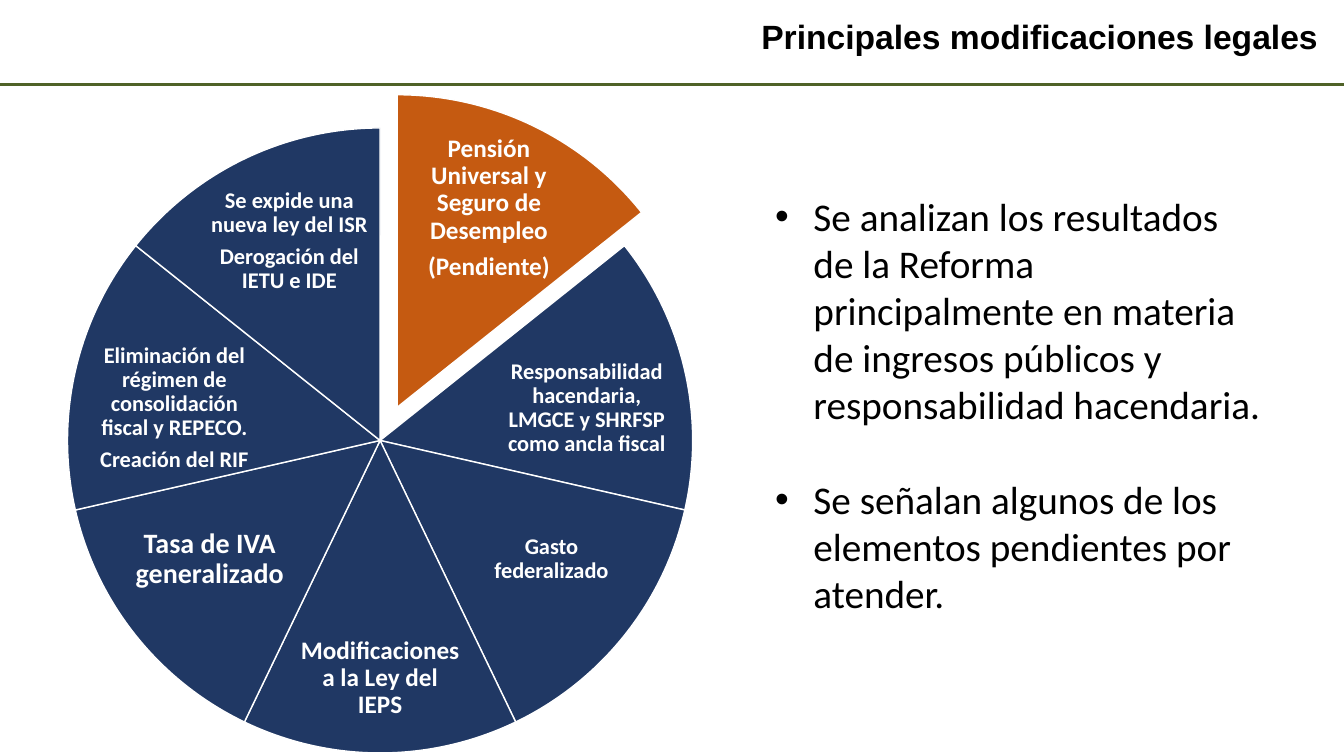
import pptx
import pptx.util
import pptx.dml.color
import pptx.enum.shapes
import pptx.enum.text
from lxml import etree

Inches, Pt = pptx.util.Inches, pptx.util.Pt
ALIGN = pptx.enum.text.PP_ALIGN
ANCHOR = pptx.enum.text.MSO_ANCHOR
COLORS = {"text": "000000", "white": "FFFFFF", "rule": "4F6228",
          "reform": "203864", "pending": "C55A11"}

# Clockwise from twelve o'clock: paragraphs, font size, label box
SLICES = [
    (["Pensión Universal y Seguro de Desempleo", "(Pendiente)"], 18, (4, 1.53, 1.7, 1.07)),
    (["Responsabilidad hacendaria, LMGCE y SHRFSP como ancla fiscal"], 16, (4.92, 3.48, 1.8, 1.14)),
    (["Gasto federalizado"], 16, (4.66, 4.96, 1.62, 1.18)),
    (["Modificaciones a la Ley del IEPS"], 18, (2.94, 6.14, 1.66, 1.18)),
    (["Tasa de IVA generalizado"], 20, (1.27, 4.96, 1.62, 1.18)),
    (["Eliminación del régimen de consolidación fiscal y REPECO.", "Creación del RIF"],
     16, (0.83, 3.48, 1.8, 1.14)),
    (["Se expide una nueva ley del ISR", "Derogación del IETU e IDE"], 16, (2.02, 1.86, 1.7, 1.07)),
]
FINDINGS = [
    "Se analizan los resultados de la Reforma principalmente en materia de ingresos públicos "
    "y responsabilidad hacendaria.",
    "Se señalan algunos de los elementos pendientes por atender.",
]


def rgb(name):
    return pptx.dml.color.RGBColor.from_string(COLORS[name])


def add_bullet(paragraph, indent):
    properties = paragraph._p.get_or_add_pPr()
    properties.set("marL", str(Inches(indent)))
    properties.set("indent", str(-Inches(indent)))
    for tag, name, value in (("buFont", "typeface", "Arial"), ("buChar", "char", "•")):
        etree.SubElement(properties, pptx.oxml.ns.qn(f"a:{tag}")).set(name, value)


def add_text(slide, box, texts, size, color, font="Calibri", bold=False, align=ALIGN.LEFT,
             anchor=ANCHOR.MIDDLE, margins=(0.1, 0.05), spacing=None, gap=0, indent=0):
    """Write paragraphs in a box; gap is the points between them."""
    frame = slide.shapes.add_textbox(*map(Inches, box)).text_frame
    across, down = map(Inches, margins)
    frame_format = {"word_wrap": True, "vertical_anchor": anchor, "margin_left": across,
                    "margin_right": across, "margin_top": down, "margin_bottom": down}
    for name, value in frame_format.items():
        setattr(frame, name, value)
    for index, text in enumerate(texts):
        paragraph = frame.add_paragraph() if index else frame.paragraphs[0]
        paragraph.text = text
        paragraph.alignment = align
        if spacing:
            paragraph.line_spacing = spacing
        if index:
            paragraph.space_before = Pt(gap)
        if indent:
            add_bullet(paragraph, indent)
        for name, value in {"name": font, "size": Pt(size), "bold": bold}.items():
            setattr(paragraph.font, name, value)
        paragraph.font.color.rgb = rgb(color)


def add_header(slide, left, top, width, height):
    rule_top = Inches(top + height)
    rule = slide.shapes.add_connector(pptx.enum.shapes.MSO_CONNECTOR.STRAIGHT,
                                      Inches(left), rule_top, Inches(left + width), rule_top)
    rule.line.color.rgb = rgb("rule")
    rule.line.width = Pt(2)
    etree.SubElement(rule._element.spPr, pptx.oxml.ns.qn("a:effectLst"))
    add_text(slide, (left + 0.05, top + 0.05, width - 0.21, height - 0.17),
             ["Principales modificaciones legales"], 24, "text", font="Arial",
             bold=True, align=ALIGN.RIGHT, spacing=0.9)


def add_reform_wheel(slide, left, top, diameter):
    """Draw equal slices, with the first one pulled out, and their labels."""
    full_turn = 216  # adjustment units in 360 degrees
    start = full_turn * 3 / 4
    step = full_turn / len(SLICES)
    for index, (texts, size, label_box) in enumerate(SLICES):
        pending = index == 0
        shift_x, shift_y = (0.17, -0.33) if pending else (0, 0)
        wedge = slide.shapes.add_shape(
            pptx.enum.shapes.MSO_SHAPE.PIE, Inches(left + shift_x), Inches(top + shift_y),
            Inches(diameter), Inches(diameter))
        wedge.adjustments[0] = (start + index * step) % full_turn
        wedge.adjustments[1] = (start + (index + 1) * step) % full_turn
        wedge.shadow.inherit = False
        wedge.fill.solid()
        wedge.fill.fore_color.rgb = rgb("pending" if pending else "reform")
        wedge.line.color.rgb = rgb("white")
        wedge.line.width = Pt(1)
        add_text(slide, label_box, texts, size, "white", bold=True, align=ALIGN.CENTER,
                 margins=(0.02, 0.02), spacing=0.9, gap=size * 0.35)


def add_findings(slide, box):
    add_text(slide, box, FINDINGS, 28, "text", anchor=ANCHOR.TOP, gap=34, indent=0.38)


def main():
    presentation = pptx.Presentation()
    presentation.slide_width = Inches(13.33)
    presentation.slide_height = Inches(7.5)
    slide = presentation.slides.add_slide(presentation.slide_layouts[6])
    add_header(slide, 0, 0, 13.33, 0.84)
    add_reform_wheel(slide, 0.67, 1.27, 6.2)
    add_findings(slide, (7.59, 1.86, 5.07, 4.34))
    presentation.save("out.pptx")


if __name__ == "__main__":
    main()
